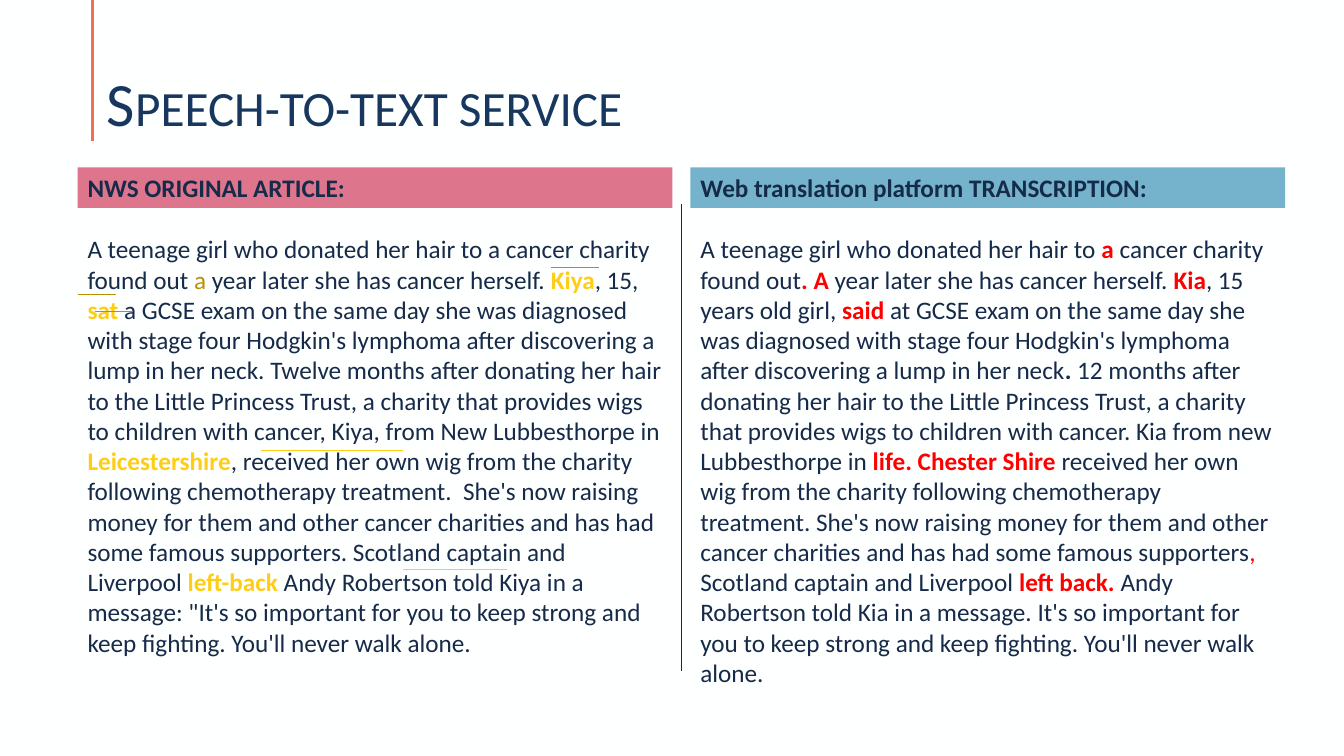
import pptx
import pptx.util
import pptx.dml.color
import pptx.enum.shapes
import pptx.enum.text
import pptx.oxml

Pt = pptx.util.Pt
FONT = "Calibri"
COLORS = {
    "background": "FEFFFF",
    "accent": "F46E56",
    "title": "17375E",
    "navy": "162A49",
    "red": "FF0000",
    "yellow": "FFCE14",
    "ochre": "B79100",
    "rose": "DD758D",
    "blue": "74B3CB",
}
# Name of a text style: colour and bold
STYLES = {
    "error": ("red", True),
    "wrong comma": ("red", False),
    "source": ("yellow", True),
    "article": ("ochre", False),
    "stop": ("navy", True),
}
COLUMN_WIDTH = 424.8
COLUMNS = [
    (55.44, "rose", "NWS ORIGINAL ARTICLE:", 334.1, [
        "A teenage girl who donated her hair to a cancer charity found out ",
        ("a ", "article"),
        "year later she has cancer herself. ",
        ("Kiya", "source"),
        ", 15, ",
        ("sat ", "source"),
        "a GCSE exam on the same day she was diagnosed with stage four Hodgkin's "
        "lymphoma after discovering a lump in her neck. Twelve months after donating "
        "her hair to the Little Princess Trust, a charity that provides wigs to "
        "children with cancer, Kiya, from New Lubbesthorpe in ",
        ("Leicestershire", "source"),
        ", received her own wig from the charity following chemotherapy treatment.  "
        "She's now raising money for them and other cancer charities and has had some "
        "famous supporters. Scotland captain and Liverpool ",
        ("left-back", "source"),
        " Andy Robertson told Kiya in a message: \"It's so important for you to keep "
        "strong and keep fighting. You'll never walk alone.",
    ]),
    (493.2, "blue", "Web translation platform TRANSCRIPTION:", 421.9, [
        "A teenage girl who donated her hair to ",
        ("a ", "error"),
        "cancer charity found out",
        (". A", "error"),
        " year later she has cancer herself. ",
        ("Kia", "error"),
        ", 15 years old girl, ",
        ("said ", "error"),
        "at GCSE exam on the same day she was diagnosed with stage four Hodgkin's "
        "lymphoma after discovering a lump in her neck",
        (".", "stop"),
        " 12 months after donating her hair to the Little Princess Trust, a charity "
        "that provides wigs to children with cancer. Kia from new Lubbesthorpe in ",
        ("life. Chester Shire ", "error"),
        "received her own wig from the charity following chemotherapy treatment. "
        "She's now raising money for them and other cancer charities and has had some "
        "famous supporters",
        (",", "wrong comma"),
        " Scotland captain and Liverpool ",
        ("left back. ", "error"),
        "Andy Robertson told Kia in a message. It's so important for you to keep "
        "strong and keep fighting. You'll never walk alone.",
    ]),
]
# Left, top, width and colour of the thin marks over the article
MARKS = [
    (55.44, 210.24, 27.36, "ochre"),
    (67.68, 222.48, 27.36, "ochre"),
    (393.84, 190.8, 33.84, "ochre"),
    (186.48, 321.84, 101.52, "yellow"),
    (288, 406.8, 74.16, "yellow"),
]


def rgb(name):
    return pptx.dml.color.RGBColor.from_string(COLORS[name])


def set_font(font, size, color, bold=False):
    font.name = FONT
    font.size = Pt(size)
    font.bold = bold
    font.color.rgb = rgb(color)


def add_line(page, left, top, right, bottom, color, weight=0.5):
    line = page.shapes.add_connector(
        pptx.enum.shapes.MSO_CONNECTOR.STRAIGHT, Pt(left), Pt(top), Pt(right), Pt(bottom))
    line.line.color.rgb = rgb(color)
    line.line.width = Pt(weight)
    properties = line.element.spPr
    properties.append(properties.makeelement(pptx.oxml.ns.qn("a:effectLst"), {}))


def add_title(page, text):
    title = page.shapes.title
    title.left, title.top, title.width, title.height = Pt(69.12), Pt(38.16), Pt(828), Pt(61.92)
    frame = title.text_frame
    frame.vertical_anchor = pptx.enum.text.MSO_ANCHOR.BOTTOM
    frame.margin_bottom = 0
    para = frame.paragraphs[0]
    para.alignment = pptx.enum.text.PP_ALIGN.LEFT
    para.line_spacing = 0.9
    span = para.add_run()
    span.text = text
    set_font(span.font, 44, "title")
    span.font._element.set("cap", "small")


def add_heading(page, left, fill, text):
    box = page.shapes.add_shape(
        pptx.enum.shapes.MSO_SHAPE.RECTANGLE, Pt(left), Pt(119.52), Pt(COLUMN_WIDTH), Pt(29.08))
    box.shadow.inherit = False
    box.fill.solid()
    box.fill.fore_color.rgb = rgb(fill)
    box.line.fill.background()
    para = box.text_frame.paragraphs[0]
    para.alignment = pptx.enum.text.PP_ALIGN.LEFT
    para.text = text
    set_font(para.font, 18, "navy", bold=True)
    para.runs[0].font.color.rgb = rgb("navy")


def add_passage(page, left, height, pieces):
    """Add one column of text; a (text, style) pair stands out from the rest."""
    box = page.shapes.add_textbox(Pt(left), Pt(163.44), Pt(COLUMN_WIDTH), Pt(height))
    box.text_frame.word_wrap = True
    para = box.text_frame.paragraphs[0]
    set_font(para.font, 18, "navy")
    for piece in pieces:
        span = para.add_run()
        if isinstance(piece, str):
            span.text = piece
        else:
            span.text, style = piece
            color, span.font.bold = STYLES[style]
            span.font.color.rgb = rgb(color)


def main():
    deck = pptx.Presentation()
    deck.slide_width, deck.slide_height = Pt(960), Pt(540)
    page = deck.slides.add_slide(deck.slide_layouts.get_by_name("Title Only"))
    page.background.fill.solid()
    page.background.fill.fore_color.rgb = rgb("background")

    add_line(page, 66.24, 0, 66.24, 100.8, "accent", 2.25)
    add_title(page, "Speech-to-text service")
    for left, fill, heading, height, pieces in COLUMNS:
        add_passage(page, left, height, pieces)
        add_heading(page, left, fill, heading)
    for left, top, width, color in MARKS:
        add_line(page, left, top, left + width, top, color)
    add_line(page, 486.72, 145.44, 486.72, 479.52, "navy")
    deck.save("out.pptx")


if __name__ == "__main__":
    main()
